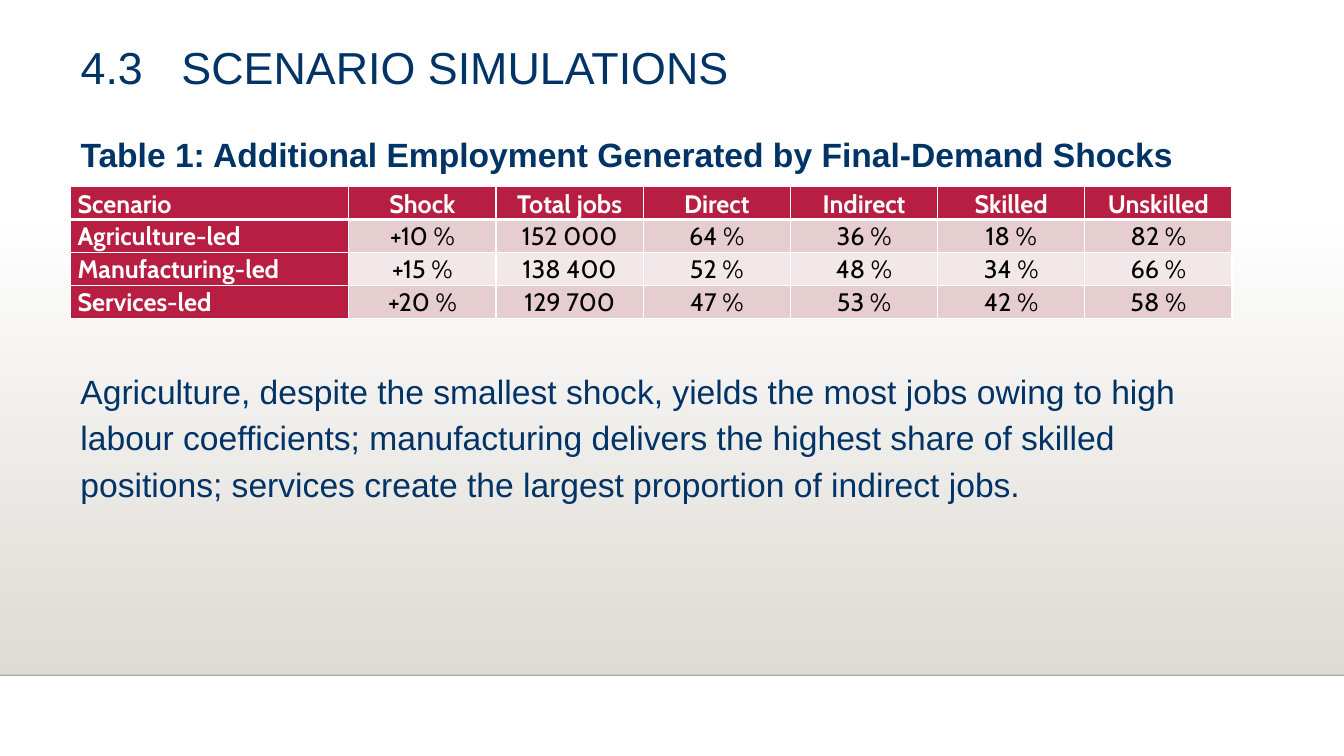
from lxml.etree import SubElement
from pptx import Presentation
from pptx.dml.color import RGBColor
from pptx.enum.shapes import MSO_CONNECTOR, MSO_SHAPE
from pptx.enum.text import MSO_ANCHOR, PP_ALIGN
from pptx.oxml.ns import qn
from pptx.util import Inches, Pt

COLORS = {
    "navy": "003366",
    "red": "B71E42",
    "band_dark": "E6CDCF",
    "band_light": "F3E8E9",
    "stone": "DFDBD5",
    "rule": "000001",
    "white": "FFFFFF",
    "black": "000000",
}
SLIDE_WIDTH = 13.33
LEFT = 0.7
FLOOR_TOP, FLOOR_BOTTOM = 2.21, 6.7

EMPLOYMENT = [
    ["Scenario", "Shock", "Total jobs", "Direct", "Indirect", "Skilled", "Unskilled"],
    ["Agriculture-led", "+10 %", "152 000", "64 %", "36 %", "18 %", "82 %"],
    ["Manufacturing-led", "+15 %", "138 400", "52 %", "48 %", "34 %", "66 %"],
    ["Services-led", "+20 %", "129 700", "47 %", "53 %", "42 %", "58 %"],
]


def rgb(name):
    return RGBColor.from_string(COLORS[name])


def set_font(p, size, color, bold=False, name="Arial"):
    p.font.name = name
    p.font.size = Pt(size)
    p.font.bold = bold
    p.font.color.rgb = rgb(color)


def set_alpha(fill_element, percent):
    """Set the opacity of the first colour found inside a fill."""
    color = next(fill_element.iter(qn("a:srgbClr")))
    SubElement(color, qn("a:alpha"), val=str(percent * 1000))


def add_floor(slide):
    """Add the stone gradient that fades upwards, and the rule below it."""
    sp = slide.shapes.add_shape(
        MSO_SHAPE.RECTANGLE, 0, Inches(FLOOR_TOP),
        Inches(SLIDE_WIDTH), Inches(FLOOR_BOTTOM - FLOOR_TOP))
    sp.shadow.inherit = False
    sp.line.fill.background()
    sp.fill.gradient()
    sp.fill.gradient_angle = 270
    for stop, position in zip(sp.fill.gradient_stops, (0, 1)):
        stop.color.rgb = rgb("stone")
        stop.position = position
    set_alpha(sp.element.spPr.find(qn("a:gradFill")), 0)

    rule = slide.shapes.add_connector(
        MSO_CONNECTOR.STRAIGHT, 0, Inches(FLOOR_BOTTOM),
        Inches(SLIDE_WIDTH), Inches(FLOOR_BOTTOM))
    rule.line.width = Pt(1)
    rule.line.color.rgb = rgb("rule")
    set_alpha(rule.element.spPr.find(qn("a:ln")), 20)
    SubElement(rule.element.spPr, qn("a:effectLst"))


def set_title(slide, text):
    title = slide.shapes.title
    title.left, title.top = Inches(LEFT), Inches(0.4)
    title.width, title.height = Inches(11.72), Inches(0.8)
    tf = title.text_frame
    tf.vertical_anchor = MSO_ANCHOR.TOP
    tf.text = text
    p = tf.paragraphs[0]
    p.alignment = PP_ALIGN.LEFT
    p.line_spacing = 0.9
    set_font(p, 32, "navy")


def add_text(slide, text, top, width, height, bold=False, anchor=MSO_ANCHOR.TOP):
    box = slide.shapes.add_textbox(
        Inches(LEFT), Inches(top), Inches(width), Inches(height))
    tf = box.text_frame
    tf.word_wrap = True
    tf.vertical_anchor = anchor
    tf.text = text
    p = tf.paragraphs[0]
    set_font(p, 24, "navy", bold)
    return p


def set_borders(cell, widths):
    """Draw white cell borders; widths maps a side (L, R, T, B) to points."""
    tc_pr = cell._tc.get_or_add_tcPr()
    for index, (side, width) in enumerate(widths.items()):
        ln = tc_pr.makeelement(qn(f"a:ln{side}"), {"w": str(Pt(width))})
        fill = SubElement(ln, qn("a:solidFill"))
        SubElement(fill, qn("a:srgbClr"), val=COLORS["white"])
        tc_pr.insert(index, ln)


def format_cell(cell, row, col):
    heading = row == 0 or col == 0
    band = "band_dark" if row % 2 else "band_light"
    cell.fill.solid()
    cell.fill.fore_color.rgb = rgb("red" if heading else band)
    cell.vertical_anchor = MSO_ANCHOR.MIDDLE
    cell.margin_left = cell.margin_right = Inches(0.07)
    cell.margin_top = cell.margin_bottom = 0
    p = cell.text_frame.paragraphs[0]
    p.alignment = PP_ALIGN.CENTER if col else PP_ALIGN.JUSTIFY
    p.line_spacing = 1.07
    set_font(p, 18, "white" if heading else "black", heading, "Cabin")
    set_borders(cell, {"L": 1, "R": 1, "T": 3 if row == 1 else 1,
                       "B": 3 if row == 0 else 1})


def add_employment_table(slide):
    frame = slide.shapes.add_table(
        len(EMPLOYMENT), len(EMPLOYMENT[0]),
        Inches(LEFT), Inches(1.85), Inches(11.5), Inches(1.22))
    table = frame.table
    table.first_col = True
    for col, column in enumerate(table.columns):
        column.width = Inches(1.46 if col else 2.76)
    for row, values in enumerate(EMPLOYMENT):
        for col, value in enumerate(values):
            cell = table.cell(row, col)
            cell.text = value
            format_cell(cell, row, col)


def main():
    prs = Presentation()
    prs.slide_width, prs.slide_height = Inches(SLIDE_WIDTH), Inches(7.5)
    slide = prs.slides.add_slide(prs.slide_layouts[5])
    add_floor(slide)
    set_title(slide, "4.3\tSCENARIO SIMULATIONS")
    add_employment_table(slide)
    add_text(slide, "Table 1: Additional Employment Generated by Final-Demand Shocks",
             1.34, 12.81, 0.37, bold=True, anchor=MSO_ANCHOR.MIDDLE)
    p = add_text(
        slide,
        "Agriculture, despite the smallest shock, yields the most jobs owing to high "
        "labour coefficients; manufacturing delivers the highest share of skilled "
        "positions; services create the largest proportion of indirect jobs.",
        3.57, 11.5, 2.54)
    p.line_spacing = 1.15
    p.space_after = Pt(6)
    prs.save("out.pptx")


if __name__ == "__main__":
    main()
